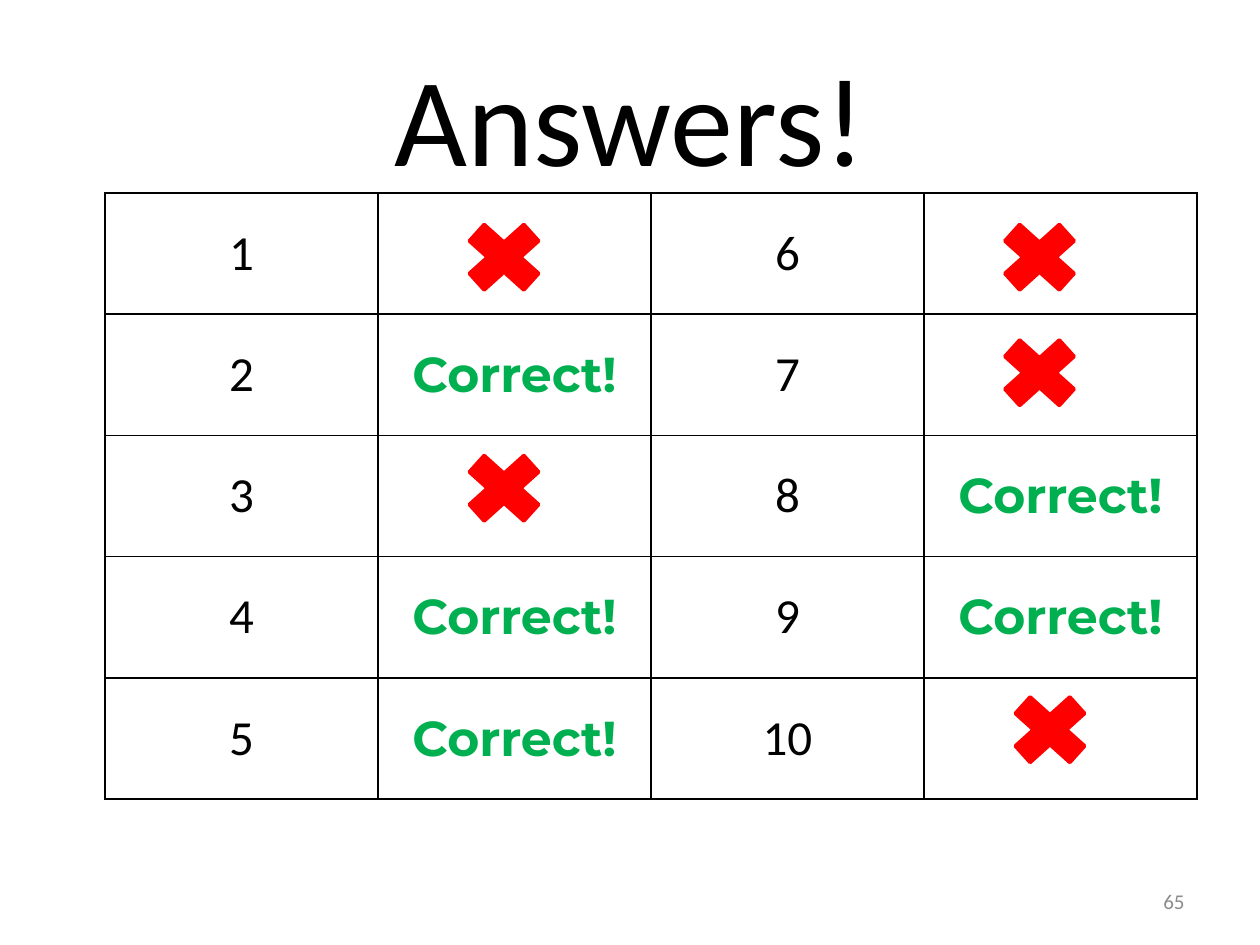
from dataclasses import dataclass

from lxml import etree
from pptx import Presentation
from pptx.dml.color import RGBColor
from pptx.enum import shapes, text
from pptx.oxml.ns import qn
from pptx.util import Pt


@dataclass(frozen=True)
class Theme:
    font: str = "Calibri"
    accent_font: str = "Montserrat"
    ink: str = "000000"
    muted: str = "8C8C8C"
    correct: str = "00B050"
    wrong: str = "FF0000"
    paper: str = "FFFFFF"
    title_size: int = 72
    cell_size: int = 28
    number_size: int = 12


class SlideBuilder:
    def __init__(self, slide, theme):
        self.slide = slide
        self.theme = theme

    def add_words(self, frame, words, size, color, align, font=None, bold=False):
        paragraph = frame.paragraphs[0]
        paragraph.alignment = align
        run = paragraph.add_run()
        run.text = words
        run.font.name = font or self.theme.font
        run.font.size = Pt(size)
        run.font.bold = bold
        run.font.color.rgb = RGBColor.from_string(color)

    def text_box(self, left, top, width, height, words, size, color, align):
        box = self.slide.shapes.add_textbox(Pt(left), Pt(top), Pt(width), Pt(height))
        frame = box.text_frame
        frame.word_wrap = True
        frame.vertical_anchor = text.MSO_ANCHOR.MIDDLE
        self.add_words(frame, words, size, color, align)

    def border(self, cell):
        properties = cell._tc.get_or_add_tcPr()
        for position, side in enumerate(("a:lnL", "a:lnR", "a:lnT", "a:lnB")):
            line = etree.Element(qn(side), w=str(Pt(1)))
            fill = etree.SubElement(line, qn("a:solidFill"))
            etree.SubElement(fill, qn("a:srgbClr"), val=self.theme.ink)
            properties.insert(position, line)

    def table(self, left, top, column_width, row_height, rows):
        theme = self.theme
        count = len(rows[0])
        table = self.slide.shapes.add_table(
            len(rows), count, Pt(left), Pt(top),
            Pt(column_width * count), Pt(row_height * len(rows))).table
        table.first_row = table.horz_banding = False
        for row, values in enumerate(rows):
            for column, value in enumerate(values):
                cell = table.cell(row, column)
                cell.fill.solid()
                cell.fill.fore_color.rgb = RGBColor.from_string(theme.paper)
                cell.vertical_anchor = text.MSO_ANCHOR.MIDDLE
                self.border(cell)
                if value:
                    verdict = value == CORRECT
                    self.add_words(cell.text_frame, value, theme.cell_size,
                                   theme.correct if verdict else theme.ink,
                                   text.PP_ALIGN.CENTER,
                                   theme.accent_font if verdict else theme.font, verdict)

    def cross(self, left, top, width=60, height=54):
        shape = self.slide.shapes.add_shape(
            shapes.MSO_SHAPE.MATH_MULTIPLY, Pt(left), Pt(top), Pt(width), Pt(height))
        shape.shadow.inherit = False
        color = RGBColor.from_string(self.theme.wrong)
        shape.fill.solid()
        shape.fill.fore_color.rgb = color
        shape.line.color.rgb = color
        shape.line.width = Pt(2)


CORRECT = "Correct!"
# Whether each of the ten answers is correct, in question order
RESULTS = [False, True, False, True, True, False, False, True, True, False]
CROSSES = [(258, 120), (258, 252), (564, 120), (564, 186), (570, 390)]


def main():
    presentation = Presentation()
    presentation.slide_width, presentation.slide_height = Pt(720), Pt(540)
    slide = presentation.slides.add_slide(presentation.slide_layouts[6])
    theme = Theme()
    builder = SlideBuilder(slide, theme)

    # Title and slide number
    builder.text_box(36, 21.6, 648, 90, "Answers!", theme.title_size,
                     theme.ink, text.PP_ALIGN.CENTER)
    builder.text_box(516, 500.5, 168, 28.75, "65", theme.number_size,
                     theme.muted, text.PP_ALIGN.RIGHT)

    # Answer grid: questions 1-5 on the left, 6-10 on the right
    answers = [(str(number), CORRECT if right else "")
               for number, right in enumerate(RESULTS, 1)]
    half = len(answers) // 2
    rows = [first + second for first, second in zip(answers[:half], answers[half:])]
    builder.table(60, 110.25, 156, 69.3, rows)

    # Crosses over the wrong answers
    for left, top in CROSSES:
        builder.cross(left, top)

    presentation.save("out.pptx")


if __name__ == "__main__":
    main()
